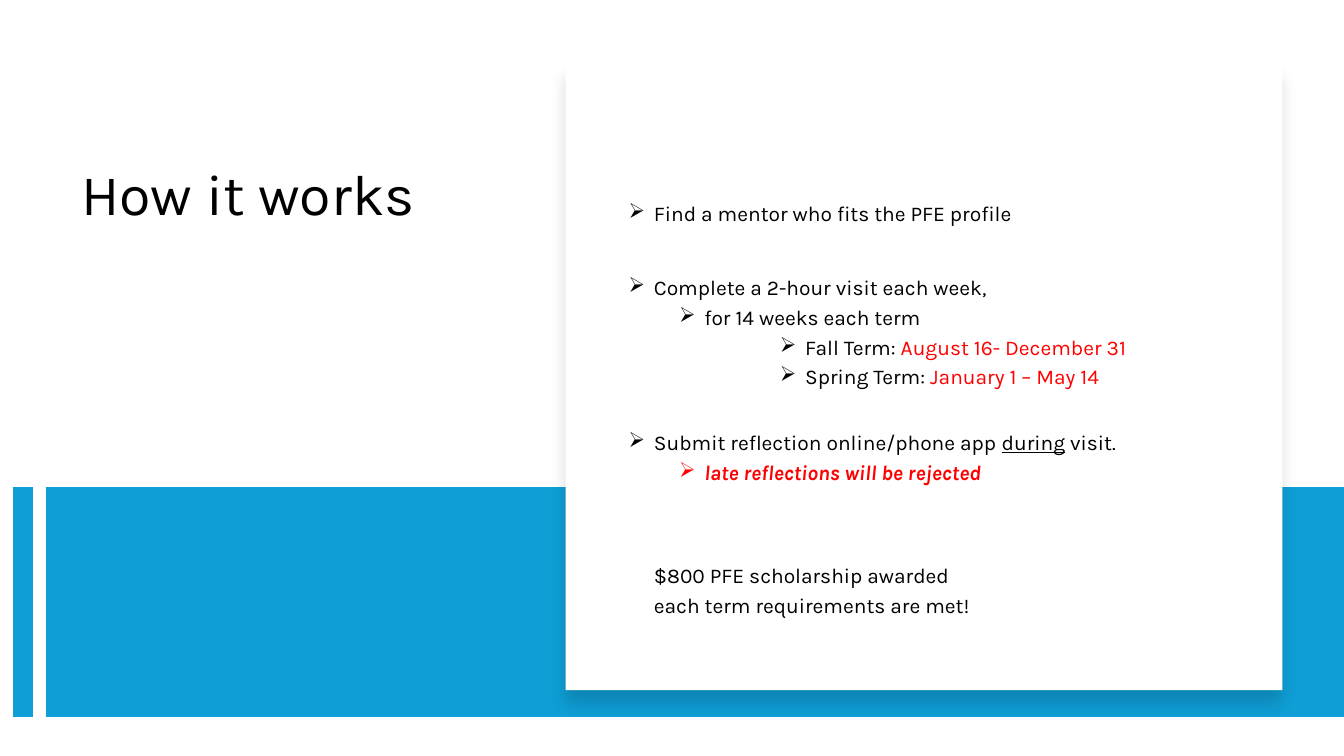
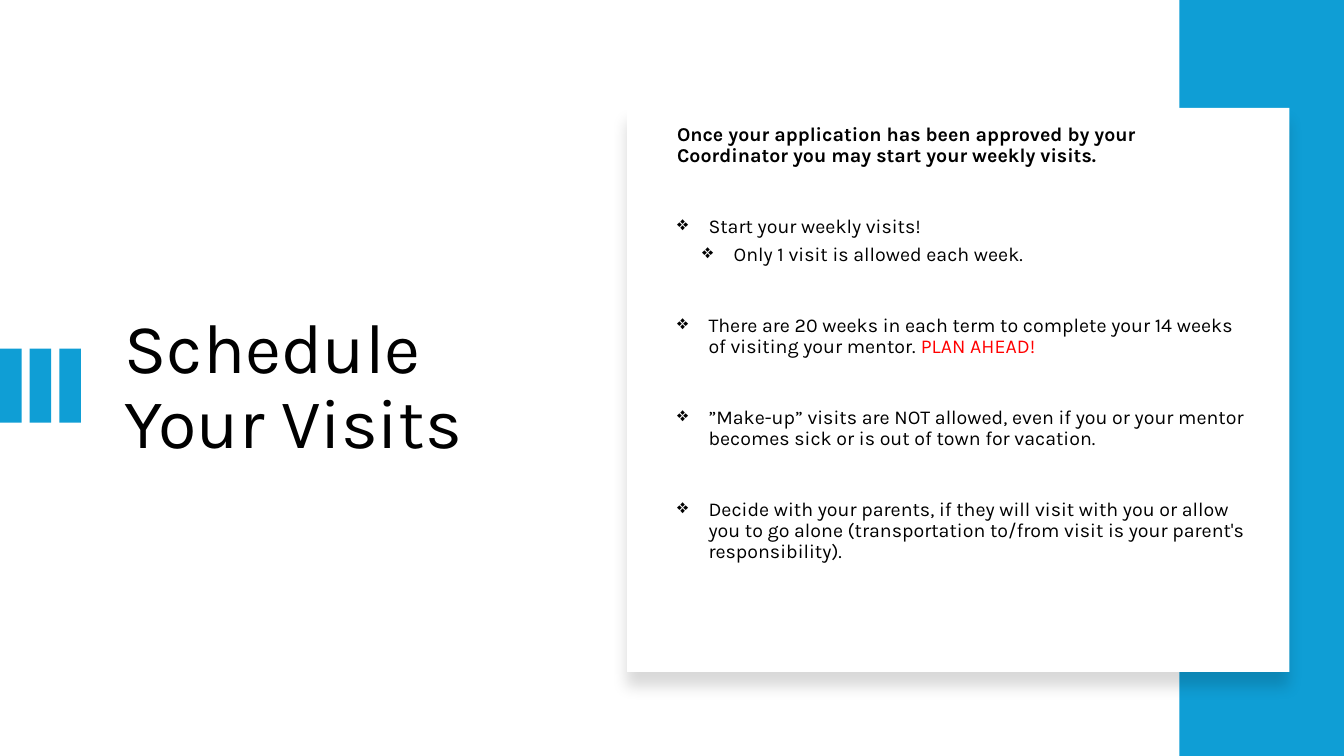
import dataclasses

import pptx
import pptx.dml.color
import pptx.enum.shapes
import pptx.enum.text
import pptx.oxml
import pptx.oxml.ns
import pptx.util

Pt = pptx.util.Pt
RECTANGLE = pptx.enum.shapes.MSO_SHAPE.RECTANGLE
ANCHOR = pptx.enum.text.MSO_ANCHOR


@dataclasses.dataclass(frozen=True)
class Theme:
    width: float = 960
    height: float = 540
    font: str = "Karla"
    accent: str = "0F9ED5"
    paper: str = "FFFFFF"
    ink: str = "000000"
    alert: str = "FF0000"
    line_spacing: float = 0.9
    title_size: float = 41
    large_title_size: float = 50
    steps_size: float = 15
    rules_size: float = 14


THEME = Theme()


def rgb(color):
    return pptx.dml.color.RGBColor.from_string(color)


# Shapes
def add_block(slide, left, top, width, height, color=THEME.accent):
    shape = slide.shapes.add_shape(RECTANGLE, Pt(left), Pt(top), Pt(width), Pt(height))
    shape.shadow.inherit = False
    shape.fill.solid()
    shape.fill.fore_color.rgb = rgb(color)
    shape.line.fill.background()
    return shape


def add_panel(slide, left, top, width, height):
    """White card with a soft shadow below it."""
    shape = add_block(slide, left, top, width, height, THEME.paper)
    effects = shape._element.spPr.find(pptx.oxml.ns.qn("a:effectLst"))
    effects.append(pptx.oxml.parse_xml(
        f'<a:outerShdw {pptx.oxml.ns.nsdecls("a")} blurRad="{Pt(11)}" dist="{Pt(10)}" '
        f'dir="5400000" algn="t" rotWithShape="0"><a:srgbClr val="{THEME.ink}">'
        '<a:alpha val="15000"/></a:srgbClr></a:outerShdw>'))


def add_vertical_line(slide, x, top, bottom, weight):
    line = slide.shapes.add_connector(
        pptx.enum.shapes.MSO_CONNECTOR.STRAIGHT, Pt(x), Pt(top), Pt(x), Pt(bottom))
    line.line.color.rgb = rgb(THEME.accent)
    line.line.width = Pt(weight)
    line._element.spPr.append(
        pptx.oxml.parse_xml(f'<a:effectLst {pptx.oxml.ns.nsdecls("a")}/>'))


# Text
def add_text_frame(slide, left, top, width, height, inset=3.6, anchor=ANCHOR.TOP):
    frame = slide.shapes.add_textbox(Pt(left), Pt(top), Pt(width), Pt(height)).text_frame
    frame.word_wrap = True
    frame.vertical_anchor = anchor
    frame.margin_left = frame.margin_right = Pt(inset)
    frame.margin_top = frame.margin_bottom = Pt(3.6)
    return frame


def add_run(paragraph, text, *, size, color=THEME.ink, bold=False, italic=False,
            underline=False):
    run = paragraph.add_run()
    run.text = text
    font = run.font
    font.name, font.size, font.color.rgb = THEME.font, Pt(size), rgb(color)
    font.bold, font.italic, font.underline = bold, italic, underline


def add_paragraph(frame, *pieces, size, bullet=None, left=0, hanging=0, before=0):
    """Each piece is a text or a pair of text and run format."""
    first = frame.paragraphs[0]
    paragraph = frame.add_paragraph() if first.runs else first
    properties = paragraph._p.get_or_add_pPr()
    properties.set("marL", str(Pt(left)))
    properties.set("indent", str(Pt(-hanging)))
    if bullet:
        properties.append(pptx.oxml.parse_xml(
            f'<a:buChar {pptx.oxml.ns.nsdecls("a")} char="{bullet}"/>'))
    paragraph.line_spacing = THEME.line_spacing
    paragraph.space_before = Pt(before)
    for piece in pieces:
        text, style = (piece, {}) if isinstance(piece, str) else piece
        add_run(paragraph, text, size=size, **style)


def add_title(slide, text, left, top, width, height, size, anchor=ANCHOR.TOP):
    frame = add_text_frame(slide, left, top, width, height, inset=7.2, anchor=anchor)
    add_paragraph(frame, text, size=size)


# Slides
def build_how_it_works(slide):
    band_top, band_height = 348, 164
    add_title(slide, "How it works", 51, 115, 299, 212, THEME.title_size)
    add_block(slide, 33, band_top, THEME.width - 33, band_height)
    add_vertical_line(slide, 16.5, band_top, band_top + band_height, 14)
    add_panel(slide, 404, 46, 512, 447)

    frame = add_text_frame(slide, 445.5, 142, 436.5, 312)
    alert = {"color": THEME.alert}
    warning = {"color": THEME.alert, "bold": True, "italic": True}

    def step(*pieces, left=18, before=5):
        add_paragraph(frame, *pieces, size=THEME.steps_size, bullet="➢",
                      left=left, hanging=18, before=before)

    def closing(text, before):
        add_paragraph(frame, text, size=THEME.steps_size, left=18, before=before)

    step("Find a mentor who fits the PFE profile", before=0)
    step("Complete a 2-hour visit each week,", before=36.5)
    step("for 14 weeks each term", left=54)
    step("Fall Term: ", ("August 16- December 31", alert), left=126)
    step("Spring Term: ", ("January 1 – May 14", alert), left=126)
    step("Submit reflection online/phone app ", ("during", {"underline": True}),
         " visit.", before=31)
    step(("late reflections will be rejected", warning), left=54)
    closing("$800 PFE scholarship awarded", before=57.5)
    closing("each term requirements are met!", before=5)


def build_schedule(slide):
    add_title(slide, "Schedule Your Visits", 82, 105, 307, 345,
              THEME.large_title_size, ANCHOR.MIDDLE)
    for index in range(3):
        add_block(slide, index * 21.2, 249, 15.4, 53)
    add_block(slide, 842.4, 0, THEME.width - 842.4, THEME.height)
    add_panel(slide, 448, 77, 473, 403)

    frame = add_text_frame(slide, 480, 85.5, 414, 364.5)
    size, gap = THEME.rules_size, 35.4

    def rule(*pieces, left=22.5, before=gap):
        add_paragraph(frame, *pieces, size=size, bullet="❖",
                      left=left, hanging=22.5, before=before)

    add_paragraph(frame, ("Once your application has been approved by your Coordinator "
                          "you may start your weekly visits.", {"bold": True}), size=size)
    rule("Start your weekly visits!")
    rule("Only 1 visit is allowed each week.", left=40.5, before=5)
    rule("There are 20 weeks in each term to complete your 14 weeks of visiting "
         "your mentor. ", ("PLAN AHEAD!", {"color": THEME.alert}))
    rule("”Make-up” visits are NOT allowed, even if you or your mentor becomes sick "
         "or is out of town for vacation.")
    rule("Decide with your parents, if they will visit with you or allow you to go alone "
         "(transportation to/from visit is your parent's responsibility).")


def main():
    presentation = pptx.Presentation()
    presentation.slide_width = Pt(THEME.width)
    presentation.slide_height = Pt(THEME.height)
    for build in (build_how_it_works, build_schedule):
        build(presentation.slides.add_slide(presentation.slide_layouts[6]))
    presentation.save("out.pptx")


if __name__ == "__main__":
    main()
